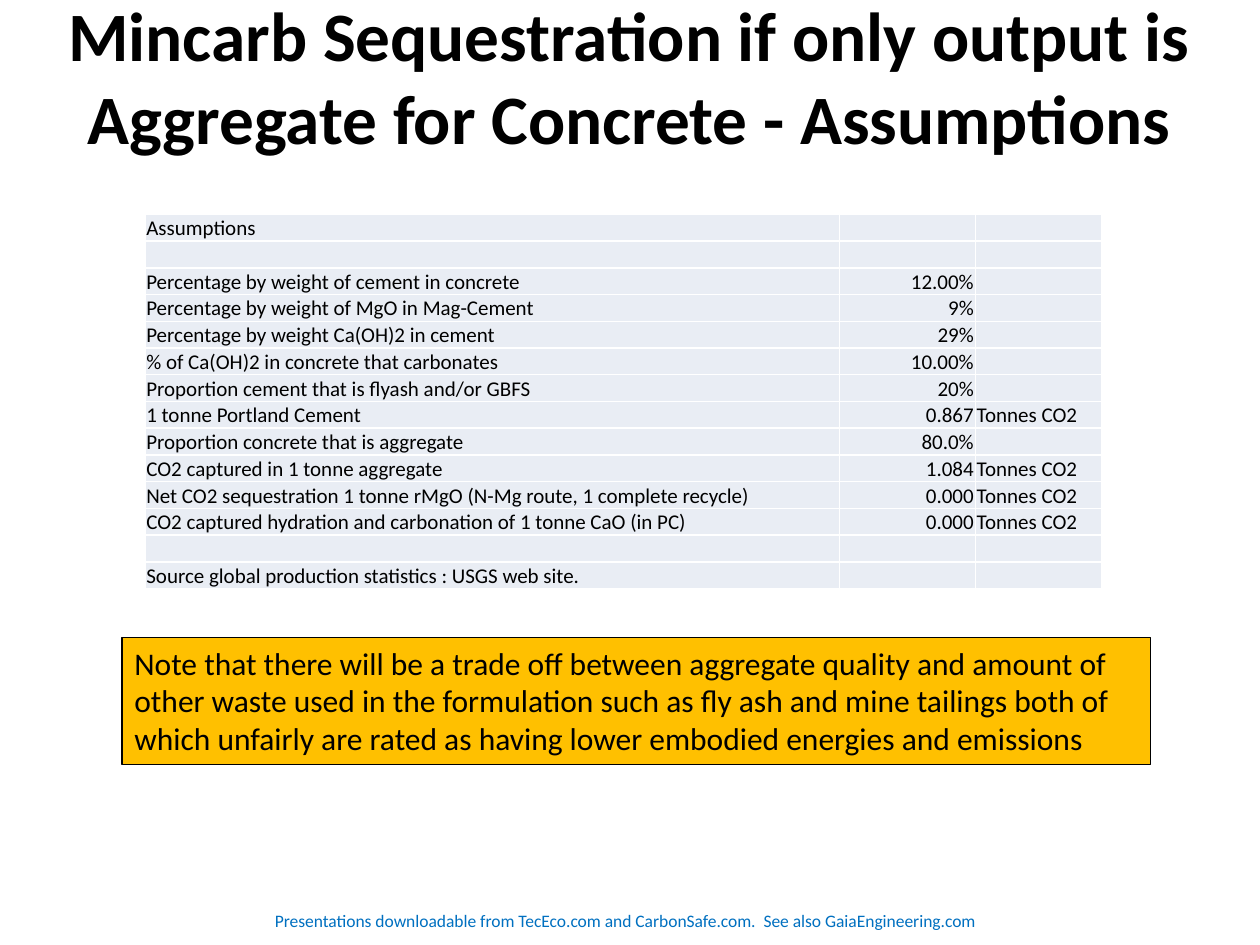
"""Build the slide of assumptions behind sequestration in concrete aggregate."""
import dataclasses
import typing

import lxml.etree
import pptx
import pptx.dml.color
import pptx.enum.shapes
import pptx.enum.text
import pptx.oxml.ns
import pptx.util

Cm = pptx.util.Cm
Align = pptx.enum.text.PP_ALIGN
Anchor = pptx.enum.text.MSO_ANCHOR


@dataclasses.dataclass(frozen=True)
class Theme:
    font: str = "Calibri"
    ink: str = "000000"
    footer_ink: str = "0070C0"
    cell_fill: str = "E9EDF4"
    border: str = "FFFFFF"
    note_fill: str = "FFC000"
    title_size: float = 39.6
    note_size: float = 18
    table_size: float = 12
    footer_size: float = 10


@dataclasses.dataclass(frozen=True)
class Frame:
    left: float
    top: float
    width: float
    height: float

    def lengths(self) -> tuple:
        return Cm(self.left), Cm(self.top), Cm(self.width), Cm(self.height)


class Assumption(typing.NamedTuple):
    label: str = ""
    value: str = ""
    unit: str = ""


THEME = Theme()
TITLE = Frame(1.09, 0, 23.19, 3.02)
FOOTER = Frame(4.7, 18.19, 15.8, 0.74)
TABLE = Frame(2.92, 4.32, 19.28, 7.5)
NOTE = Frame(2.46, 12.85, 20.73, 2.57)
COLUMN_WIDTHS = (14, 2.74, 2.54)
COLUMN_ALIGNMENTS = (Align.LEFT, Align.RIGHT, Align.LEFT)

ASSUMPTIONS = (
    Assumption("Assumptions"),
    Assumption(),
    Assumption("Percentage by weight of cement in concrete", "12.00%"),
    Assumption("Percentage by weight of MgO in Mag-Cement", "9%"),
    Assumption("Percentage by weight Ca(OH)2 in cement", "29%"),
    Assumption("% of Ca(OH)2 in concrete that carbonates", "10.00%"),
    Assumption("Proportion cement that is flyash and/or GBFS", "20%"),
    Assumption("1 tonne Portland Cement", "0.867", "Tonnes CO2"),
    Assumption("Proportion concrete that is aggregate", "80.0%"),
    Assumption("CO2 captured in 1 tonne aggregate", "1.084", "Tonnes CO2"),
    Assumption("Net CO2 sequestration 1 tonne rMgO (N-Mg route, 1 complete recycle)",
               "0.000", "Tonnes CO2"),
    Assumption("CO2 captured hydration and carbonation of 1 tonne CaO (in PC)",
               "0.000", "Tonnes CO2"),
    Assumption(),
    Assumption("Source global production statistics : USGS web site."),
)


def color(value: str) -> pptx.dml.color.RGBColor:
    return pptx.dml.color.RGBColor.from_string(value)


def write(text_frame, text: str, size: float, ink: str, alignment, bold: bool = False) -> None:
    text_frame.text = text
    para = text_frame.paragraphs[0]
    para.alignment = alignment
    for span in para.runs:
        span.font.name = THEME.font
        span.font.size = pptx.util.Pt(size)
        span.font.bold = bold
        span.font.color.rgb = color(ink)


def add_text(page, frame: Frame, text: str, size: float, ink: str, bold: bool = False) -> None:
    box = page.shapes.add_textbox(*frame.lengths())
    box.text_frame.word_wrap = True
    box.text_frame.vertical_anchor = Anchor.MIDDLE
    write(box.text_frame, text, size, ink, Align.CENTER, bold)


def add_borders(cell) -> None:
    properties = cell._tc.get_or_add_tcPr()
    qn = pptx.oxml.ns.qn
    for side in ("a:lnL", "a:lnR", "a:lnT", "a:lnB"):
        line = lxml.etree.SubElement(properties, qn(side), w=str(pptx.util.Pt(1)))
        fill = lxml.etree.SubElement(line, qn("a:solidFill"))
        lxml.etree.SubElement(fill, qn("a:srgbClr"), val=THEME.border)


def fill_cell(cell, text: str, alignment) -> None:
    add_borders(cell)
    cell.fill.solid()
    cell.fill.fore_color.rgb = color(THEME.cell_fill)
    cell.margin_left = cell.margin_right = cell.margin_top = Cm(0.03)
    cell.margin_bottom = Cm(0)
    cell.vertical_anchor = Anchor.BOTTOM
    write(cell.text_frame, text, THEME.table_size, THEME.ink, alignment)
    if not text:
        lxml.etree.SubElement(cell.text_frame.paragraphs[0]._p,
                              pptx.oxml.ns.qn("a:endParaRPr"),
                              sz=str(THEME.table_size * 100))


def add_assumptions(page) -> None:
    table = page.shapes.add_table(len(ASSUMPTIONS), len(COLUMN_WIDTHS), *TABLE.lengths()).table
    table.first_row = False
    table.horz_banding = False
    for column, width in zip(table.columns, COLUMN_WIDTHS):
        column.width = Cm(width)
    for row, assumption in zip(table.rows, ASSUMPTIONS):
        row.height = Cm(TABLE.height / len(ASSUMPTIONS))
        for cell, text, alignment in zip(row.cells, assumption, COLUMN_ALIGNMENTS):
            fill_cell(cell, text, alignment)


def add_note(page, text: str) -> None:
    box = page.shapes.add_shape(pptx.enum.shapes.MSO_SHAPE.RECTANGLE, *NOTE.lengths())
    box.shadow.inherit = False
    box.fill.solid()
    box.fill.fore_color.rgb = color(THEME.note_fill)
    box.line.color.rgb = color(THEME.ink)
    box.line.width = pptx.util.Pt(0.75)
    box.text_frame.word_wrap = True
    box.text_frame.auto_size = pptx.enum.text.MSO_AUTO_SIZE.SHAPE_TO_FIT_TEXT
    box.text_frame.vertical_anchor = Anchor.TOP
    write(box.text_frame, text, THEME.note_size, THEME.ink, Align.LEFT)


def main() -> None:
    deck = pptx.Presentation()
    deck.slide_width, deck.slide_height = Cm(25.4), Cm(19.05)
    page = deck.slides.add_slide(deck.slide_layouts[6])
    add_text(page, TITLE,
             "Mincarb Sequestration if only output is Aggregate for Concrete - Assumptions",
             THEME.title_size, THEME.ink, bold=True)
    add_text(page, FOOTER,
             "Presentations downloadable from TecEco.com and CarbonSafe.com.  "
             "See also GaiaEngineering.com",
             THEME.footer_size, THEME.footer_ink)
    add_assumptions(page)
    add_note(page,
             "Note that there will be a trade off between aggregate quality and amount of "
             "other waste used in the formulation such as fly ash and mine tailings both of "
             "which unfairly are rated as having lower embodied energies and emissions")
    deck.save("out.pptx")


if __name__ == "__main__":
    main()
